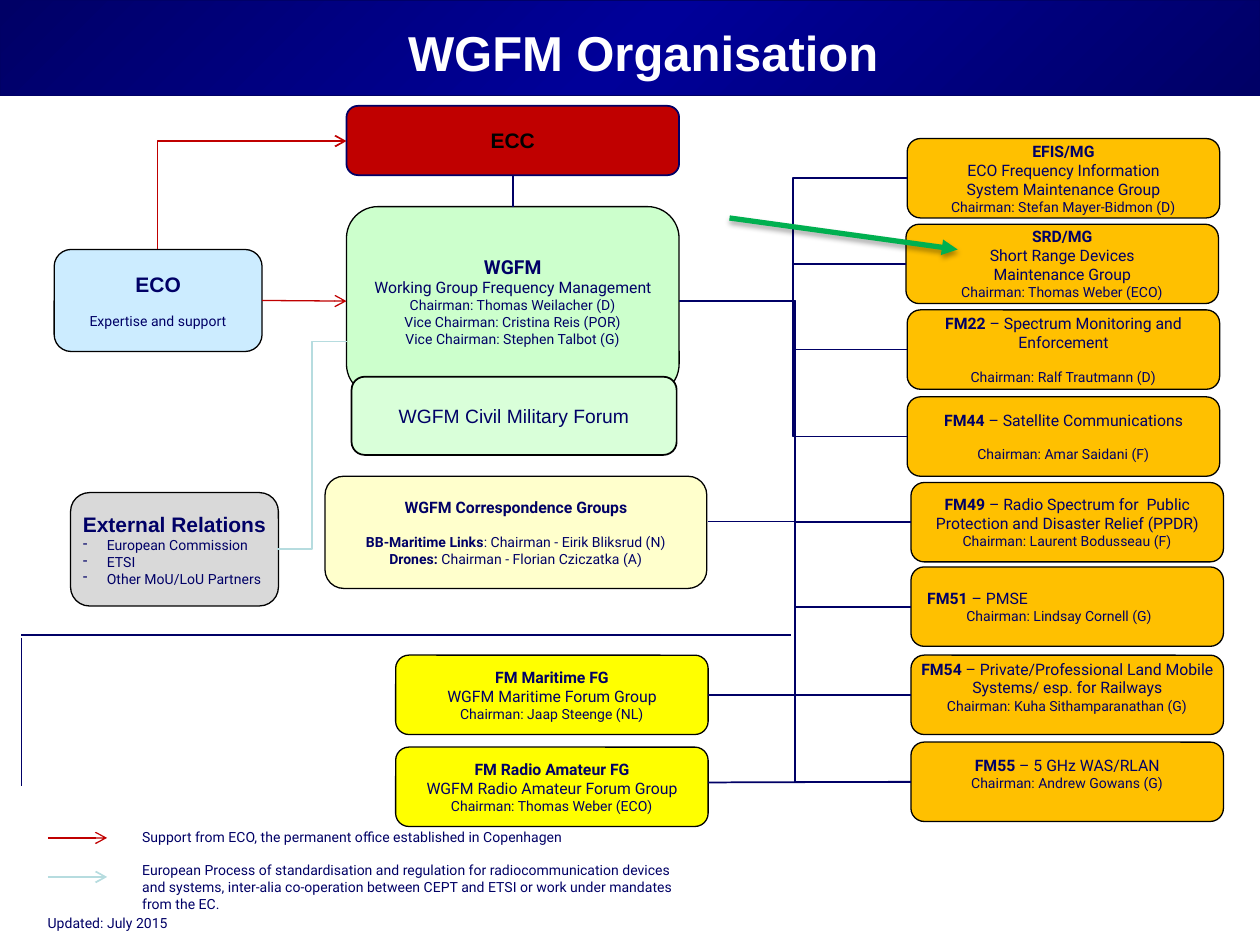
from copy import deepcopy

from lxml.etree import SubElement
from pptx import Presentation
from pptx.dml.color import RGBColor
from pptx.enum.shapes import MSO_CONNECTOR, MSO_SHAPE
from pptx.enum.text import MSO_ANCHOR, PP_ALIGN
from pptx.oxml.ns import qn
from pptx.util import Inches, Pt

NAVY, RED, TEAL, GREEN = "000066", "C00000", "B6DCDF", "00B050"
ORANGE, YELLOW = "FFC000", "FFFF00"
ARIAL = {"name": "Arial"}
GAP = {"space_before": Pt(9.4)}
LEFT = {"alignment": PP_ALIGN.LEFT}
GROUP_W, GROUP_H = 2.48, 0.63

# Each line is (text, size, font, paragraph); the part before "|" is bold.
BOXES = {
    "ECC": ((2.75, 0.84, 2.64, 0.55), RED, NAVY, 1, [("ECC|", 12, {"name": "Arial", "color": "000000"})]),
    "ECO": ((0.43, 1.98, 1.65, 0.81), "CCECFF", "000000", 0.75, [
        ("ECO|", 12, ARIAL), ("Expertise and support", 8, {}, GAP)]),
    "WGFM": ((2.75, 1.64, 2.64, 1.5), "CCFFCC", "000000", 0.75, [
        ("WGFM|", 11), ("Working Group Frequency Management", 9),
        ("Chairman: Thomas Weilacher (D)", 8),
        ("Vice Chairman: Cristina Reis (POR)", 8),
        ("Vice Chairman: Stephen Talbot (G)", 8)]),
    "Forum": ((2.79, 2.99, 2.58, 0.62), "D9FFD9", "000000", 1, [
        ("WGFM Civil Military Forum", 11, ARIAL)]),
    "External": ((0.56, 3.91, 1.65, 0.9), "D9D9D9", "000000", 0.75, [
        ("External Relations|", 12, ARIAL), ("European Commission", 8, {}, LEFT, "-"),
        ("ETSI", 8, {}, LEFT, "-"), ("Other MoU/LoU Partners", 8, {}, LEFT, "-")]),
    "Correspondence": ((2.58, 3.78, 3.03, 0.89), "FFFFCC", "000000", 0.75, [
        ("WGFM Correspondence Groups|", 9),
        ("BB-Maritime Links|: Chairman - Eirik Bliksrud (N)", 8, {}, GAP),
        ("Drones: |Chairman - Florian Cziczatka (A)", 8)]),
}

GROUPS = {
    "Maritime": (3.14, 5.2, YELLOW, [
        ("FM Maritime FG|", 9), ("WGFM Maritime Forum Group", 9), ("Chairman: Jaap Steenge (NL)", 8)]),
    "Amateur": (3.14, 5.93, YELLOW, [
        ("FM Radio Amateur FG|", 9), ("WGFM Radio Amateur Forum Group", 9),
        ("Chairman: Thomas Weber (ECO)", 8)]),
    "EFIS": (7.2, 1.1, ORANGE, [
        ("EFIS/MG|", 9), ("ECO Frequency Information", 9), ("System Maintenance Group", 9),
        ("Chairman: Stefan Mayer-Bidmon (D)", 8)]),
    "SRD": (7.19, 1.78, ORANGE, [
        ("SRD/MG|", 9), ("Short Range Devices", 9), ("Maintenance Group", 9),
        ("Chairman: Thomas Weber (ECO)", 8)]),
    "FM22": (7.2, 2.46, ORANGE, [
        ("FM22| – Spectrum Monitoring and", 9), ("Enforcement", 9),
        ("Chairman: Ralf Trautmann (D)", 8, {}, GAP)]),
    "FM44": (7.2, 3.15, ORANGE, [
        ("FM44| – Satellite Communications", 9), ("Chairman: Amar Saidani (F)", 8, {}, GAP)]),
    "FM49": (7.23, 3.83, ORANGE, [
        ("FM49| – Radio Spectrum for  Public", 9), ("Protection and Disaster Relief (PPDR)", 9),
        ("Chairman: Laurent Bodusseau (F)", 8)]),
    "FM51": (7.23, 4.5, ORANGE, [
        ("FM51| – PMSE", 9, {}, LEFT), ("Chairman: Lindsay Cornell (G)", 8, {}, LEFT, "", 0.31)]),
    "FM54": (7.23, 5.2, ORANGE, [
        ("FM54| – Private/Professional Land Mobile", 9), ("Systems/ esp. for Railways", 9),
        ("Chairman: Kuha Sithamparanathan (G)", 8)]),
    "FM55": (7.23, 5.89, ORANGE, [
        ("FM55| – 5 GHz WAS/RLAN", 9), ("Chairman: Andrew Gowans (G)", 8)]),
}
RAISED = {"FM54", "FM55"}
BRANCHES = ["EFIS", "SRD", "FM22", "FM44", "FM49", "FM51", "FM55"]

TEXTS = [
    ((3.14, 0.13, 3.94, 0.57), False, [("WGFM Organisation|", 28, {"name": "Arial", "color": "FFFFFF"}, LEFT)]),
    ((1.03, 6.53, 4.44, 0.23), True, [
        ("Support from ECO, the permanent office established in Copenhagen", 8, {}, LEFT)]),
    ((1.03, 6.79, 4.68, 0.51), True, [
        ("European Process of standardisation and regulation for radiocommunication devices", 8, {}, LEFT),
        ("and systems, inter-alia co-operation between CEPT and ETSI or work under mandates", 8, {}, LEFT),
        ("from the EC.", 8, {}, LEFT)]),
    ((0.28, 7.21, 1.58, 0.24), True, [("Updated: July 2015", 8, {}, LEFT)]),
]

# Each line is (start, end, colour, width, arrowhead, start joint, end joint).
LINES = [
    ((0.38, 6.65), (0.85, 6.65), RED, 0.75, "arrow", None, None),
    ((0.38, 6.96), (0.85, 6.96), TEAL, 1, "arrow", None, None),
    ((2.08, 2.39), (2.75, 2.39), RED, 0.75, "arrow", ("ECO", 3), ("WGFM", 1)),
    ((4.07, 1.39), (4.07, 1.64), NAVY, 1, None, ("ECC", 2), ("WGFM", 0)),
    ((5.62, 4.14), (6.32, 4.14), NAVY, 1, None, None, None),
    ((5.62, 5.52), (7.23, 5.52), NAVY, 1, None, ("Maritime", 3), ("FM54", 1)),
    ((5.62, 6.21), (7.23, 6.21), NAVY, 1, None, None, ("FM55", 1)),
    ((0.17, 5.04), (6.28, 5.04), NAVY, 1, None, None, None),
    ((0.17, 5.06), (0.17, 6.24), NAVY, 1, None, None, None),
]


def rgb(value):
    return RGBColor.from_string(value)


def set_all(obj, values):
    for key, value in values.items():
        setattr(obj, key, value)


def write(tf, lines, **frame):
    set_all(tf, frame)
    for i, (text, size, *rest) in enumerate(lines):
        font, para, bullet, indent = (rest + [{}, {}, "", 0][len(rest):])
        p = tf.paragraphs[0] if i == 0 else tf.add_paragraph()
        set_all(p, {"alignment": PP_ALIGN.CENTER, **para})
        pPr = p._p.get_or_add_pPr()
        if bullet:
            pPr.set("marL", str(Inches(0.19)))
            pPr.set("indent", str(-Inches(0.19)))
            SubElement(pPr, qn("a:buChar")).set("char", bullet)
        elif indent:
            pPr.set("marL", str(Inches(indent)))
        bold, bar, plain = text.partition("|")
        for part, is_bold in ((bold, bool(bar)), (plain, False)):
            if part:
                r = p.add_run()
                r.text = part
                set_all(r.font, {"name": font.get("name", "Roboto"), "size": Pt(size), "bold": is_bold})
                r.font.color.rgb = rgb(font.get("color", NAVY))


def add_box(s, at, fill, line, width, lines, bottom=0.05):
    sp = s.shapes.add_shape(MSO_SHAPE.ROUNDED_RECTANGLE, *map(Inches, at))
    sp.shadow.inherit = False
    sp.fill.solid()
    sp.fill.fore_color.rgb = rgb(fill)
    sp.line.color.rgb = rgb(line)
    sp.line.width = Pt(width)
    write(sp.text_frame, lines, word_wrap=False, vertical_anchor=MSO_ANCHOR.MIDDLE,
          margin_bottom=Inches(bottom))
    return sp


def add_line(s, start, end, color, width, head=None, kind=MSO_CONNECTOR.STRAIGHT):
    cx = s.shapes.add_connector(kind, *map(Inches, start + end))
    cx.line.color.rgb = rgb(color)
    cx.line.width = Pt(width)
    if head:
        SubElement(cx.line._get_or_add_ln(), qn("a:tailEnd")).set("type", head)
    SubElement(cx._element.spPr, qn("a:effectLst"))
    return cx


def add_banner(s):
    sp = s.shapes.add_shape(MSO_SHAPE.RECTANGLE, 0, 0, Inches(10), Inches(0.76))
    sp.shadow.inherit = False
    sp.line.color.rgb = rgb(NAVY)
    sp.line.width = Pt(0.75)
    sp.fill.gradient()
    sp.fill.gradient_angle = 315
    gs = sp._element.spPr.find(".//" + qn("a:gs"))
    gs.addnext(deepcopy(gs))
    for stop, color, pos in zip(sp.fill.gradient_stops, (NAVY, "000099", NAVY), (0, 0.5, 1)):
        stop.color.rgb = rgb(color)
        stop.position = pos


def add_pointer(s):
    cx = add_line(s, (5.79, 1.73), (7.6, 1.98), GREEN, 3, "triangle")
    shadow = SubElement(cx._element.spPr.find(qn("a:effectLst")), qn("a:outerShdw"))
    for key, value in {"blurRad": Pt(3.1), "dist": Pt(1.8), "dir": 5400000, "rotWithShape": 0}.items():
        shadow.set(key, str(value))
    color = SubElement(shadow, qn("a:srgbClr"), val="000000")
    SubElement(color, qn("a:alpha"), val="35000")


def main():
    prs = Presentation()
    prs.slide_width, prs.slide_height = Inches(10), Inches(7.5)
    s = prs.slides.add_slide(prs.slide_layouts[6])
    add_banner(s)
    boxes = {name: add_box(s, *box) for name, box in BOXES.items()}
    for name, (x, y, fill, lines) in GROUPS.items():
        boxes[name] = add_box(s, (x, y, GROUP_W, GROUP_H), fill, "000000", 0.75, lines,
                              0.18 if name in RAISED else 0.05)
    for at, wrap, lines in TEXTS:
        write(s.shapes.add_textbox(*map(Inches, at)).text_frame, lines, word_wrap=wrap)
    for name in BRANCHES:
        x, y = GROUPS[name][:2]
        add_line(s, (x, y + GROUP_H / 2), (5.39, 2.39), NAVY, 1, kind=MSO_CONNECTOR.ELBOW)
    add_line(s, (2.2, 4.36), (2.75, 2.71), TEAL, 1, kind=MSO_CONNECTOR.ELBOW)
    support = add_line(s, (2.43, 2.3), (1.57, 0.8), RED, 1, "arrow", MSO_CONNECTOR.ELBOW)
    support._element.spPr.find(qn("a:prstGeom")).set("prst", "bentConnector2")
    support._element.spPr.find(qn("a:xfrm")).set("rot", "5400000")
    for *line, begin, end in LINES:
        cx = add_line(s, *line)
        if begin:
            cx.begin_connect(boxes[begin[0]], begin[1])
        if end:
            cx.end_connect(boxes[end[0]], end[1])
    add_pointer(s)
    prs.save("out.pptx")


if __name__ == "__main__":
    main()
